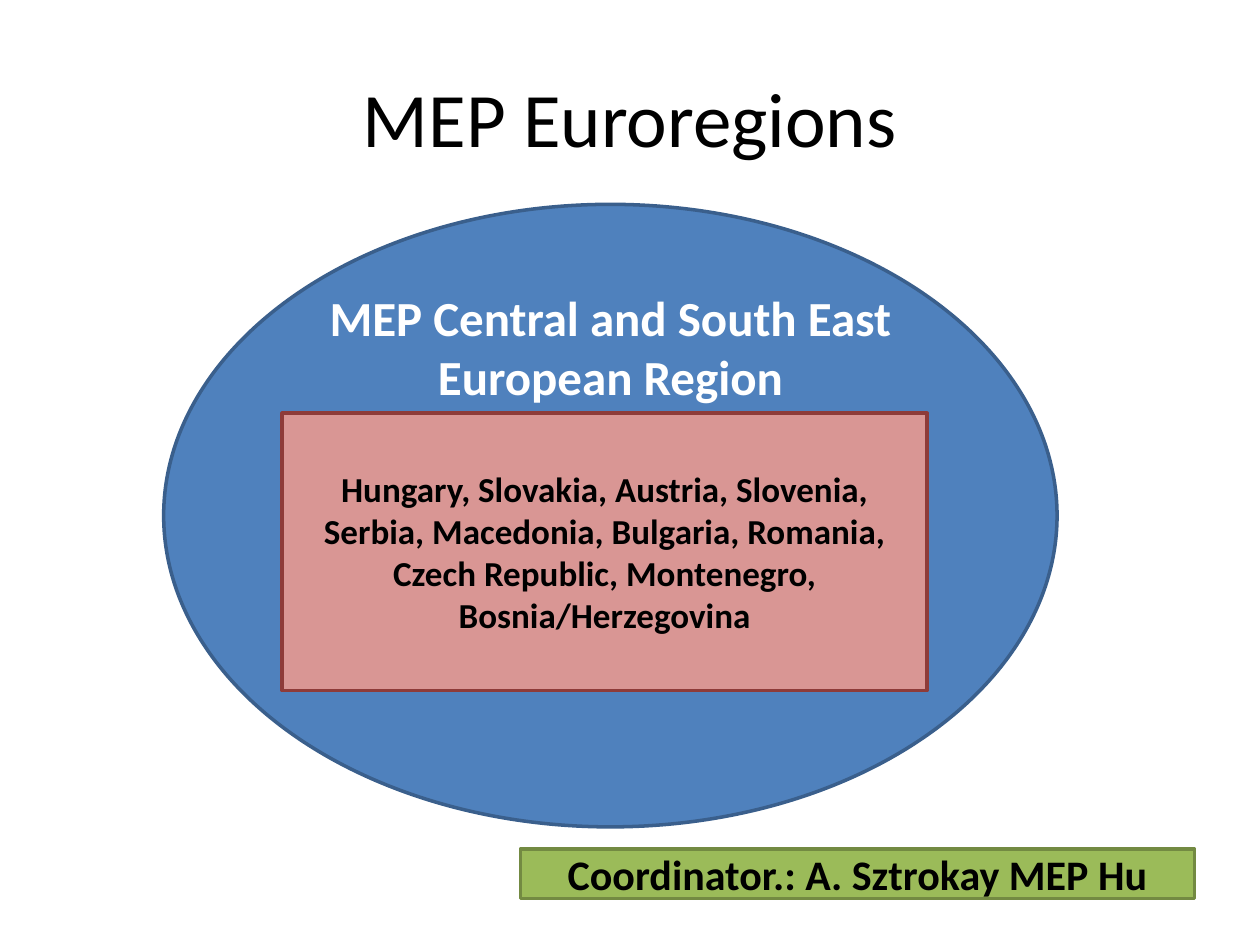
from pptx import Presentation
from pptx.dml.color import RGBColor
from pptx.enum import shapes, text
from pptx.util import Cm, Pt

BLACK = RGBColor(0x00, 0x00, 0x00)
WHITE = RGBColor(0xFF, 0xFF, 0xFF)
BLUE = RGBColor(0x4F, 0x81, 0xBD)
NAVY = RGBColor(0x3A, 0x5F, 0x8C)
PINK = RGBColor(0xD9, 0x96, 0x94)
RED = RGBColor(0x8E, 0x3B, 0x39)
GREEN = RGBColor(0x9B, 0xBB, 0x59)
OLIVE = RGBColor(0x73, 0x8A, 0x42)
OVAL = shapes.MSO_SHAPE.OVAL
RECT = shapes.MSO_SHAPE.RECTANGLE


def write(shape, words, size, color, bold):
    frame = shape.text_frame
    frame.word_wrap = True
    frame.vertical_anchor = text.MSO_ANCHOR.MIDDLE
    para = frame.paragraphs[0]
    para.text = words
    para.alignment = text.PP_ALIGN.CENTER
    para.font.name = "Calibri"
    para.font.size = Pt(size)
    para.font.bold = bold
    para.font.color.rgb = color


deck = Presentation()
deck.slide_width = Cm(25.4)
deck.slide_height = Cm(19.05)
slide = deck.slides.add_slide(deck.slide_layouts[6])

title = slide.shapes.add_textbox(Cm(1.27), Cm(0.76), Cm(22.86), Cm(3.18))
write(title, "MEP Euroregions", 44, BLACK, False)

parts = [
    (OVAL, (3.3, 4.12, 18.01, 12.55), BLUE, NAVY, 28, WHITE, 6.96,
     "MEP Central and South East European Region"),
    (RECT, (5.69, 8.33, 13, 5.59), PINK, RED, 20, BLACK, 0.13,
     "Hungary, Slovakia, Austria, Slovenia, Serbia, Macedonia, Bulgaria, "
     "Romania, Czech Republic, Montenegro, Bosnia/Herzegovina"),
    (RECT, (10.49, 17.12, 13.59, 0.99), GREEN, OLIVE, 24, BLACK, 0.13,
     "Coordinator.: A. Sztrokay MEP Hu"),
]
for kind, box, fill, edge, size, color, foot, words in parts:
    shape = slide.shapes.add_shape(kind, *[Cm(side) for side in box])
    shape.shadow.inherit = False
    shape.fill.solid()
    shape.fill.fore_color.rgb = fill
    shape.line.color.rgb = edge
    shape.line.width = Pt(2)
    write(shape, words, size, color, True)
    shape.text_frame.margin_bottom = Cm(foot)

deck.save("out.pptx")
